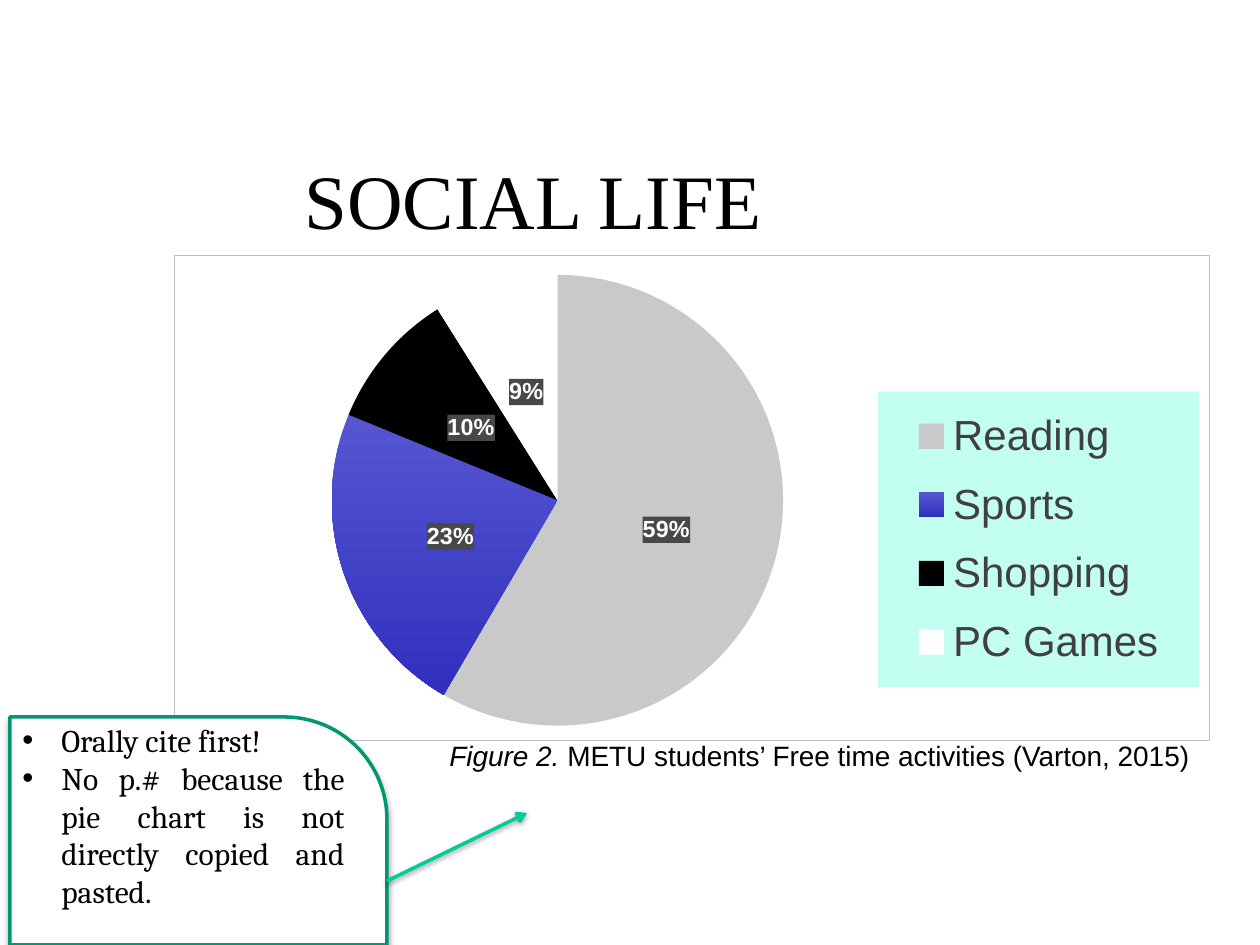
from lxml import etree
from pptx import Presentation, util as u
from pptx.chart.data import CategoryChartData
from pptx.dml.color import RGBColor
from pptx.enum import chart as charts, shapes, text
from pptx.oxml import parse_xml
from pptx.oxml.ns import nsdecls, qn

EMU_PER_PX = 914400 / 126
rgb = RGBColor.from_string


def px(*lengths):
    return [u.Emu(round(n * EMU_PER_PX)) for n in lengths]


def add_shadow(shape, blur, distance, opacity):
    shape._element.spPr.append(parse_xml(
        f'<a:effectLst {nsdecls("a")}><a:outerShdw blurRad="{u.Pt(blur)}" '
        f'dist="{u.Pt(distance)}" dir="5400000" rotWithShape="0">'
        f'<a:srgbClr val="000000"><a:alpha val="{opacity * 1000}"/></a:srgbClr>'
        '</a:outerShdw></a:effectLst>'))


prs = Presentation()
prs.slide_width, prs.slide_height = px(1260, 945)
slide = prs.slides.add_slide(prs.slide_layouts[5])

# Title
title = slide.shapes.title
title.left, title.top, title.width, title.height = px(292, 108, 1036, 182)
title.text_frame.text = "SOCIAL LIFE"
title.text_frame.vertical_anchor = text.MSO_ANCHOR.MIDDLE
heading = title.text_frame.paragraphs[0]
heading.alignment = text.PP_ALIGN.LEFT
heading.font.size = u.Pt(44)
heading.font.name = "Times New Roman"
heading.font.color.rgb = rgb("000000")

# Pie chart of activities
activities = CategoryChartData()
activities.categories = ["Reading", "Sports", "Shopping", "PC Games"]
activities.add_series("Series 1", [59, 23, 10, 9])
pie = slide.shapes.add_chart(
    charts.XL_CHART_TYPE.PIE, *px(174, 255, 1036, 486), activities).chart
pie.has_title = False
pie.font.size = u.Pt(10)
pie.font.name = "Arial"
pie.font.color.rgb = rgb("000000")
pie.plots[0].vary_by_categories = True
slices = pie.plots[0].series[0]

for i, color in enumerate(["C9C9C9", None, "000000", "FFFFFF"]):
    part = slices.points[i].format
    part.line.fill.background()
    if color:
        part.fill.solid()
        part.fill.fore_color.rgb = rgb(color)
    else:
        part.fill.gradient()
        part.fill.gradient_angle = 270
        for stop, shade in zip(part.fill.gradient_stops, ["5656D1", "3030BE"]):
            stop.color.rgb = rgb(shade)

shares = slices.data_labels
shares.show_value = True
shares.number_format = '0"%"'
shares.number_format_is_linked = False
shares.position = charts.XL_LABEL_POSITION.CENTER
shares.font.size = u.Pt(13.3)
shares.font.bold = True
shares.font.name = "Arial"
shares.font.color.rgb = rgb("FFFFFF")

pie.has_legend = True
legend = pie.legend
legend.position = charts.XL_LEGEND_POSITION.RIGHT
legend.include_in_layout = False
legend.font.size = u.Pt(24)
legend.font.name = "Arial"
legend.font.color.rgb = rgb("404040")

# Chart backgrounds and border
solid = '<a:solidFill><a:srgbClr val="{}"/></a:solidFill>'
for owner, look in [
    (pie._chartSpace, '<a:noFill/><a:ln w="9525">' + solid.format("BFBFBF") + '</a:ln>'),
    (legend._element, solid.format("C2FFF0")),
    (shares._element, solid.format("484848")),
]:
    owner.find(qn("c:txPr")).addprevious(
        parse_xml(f'<c:spPr {nsdecls("c", "a")}>{look}</c:spPr>'))

# Places of pie and legend, as fractions of the chart
plot_area = pie._chartSpace.find(".//" + qn("c:plotArea"))
for owner, index, target, place in [
    (plot_area, 0, '<c:layoutTarget val="inner"/>', (0.15, 0.04, 0.44, 0.93)),
    (legend._element, 1, "", (0.68, 0.28, 0.31, 0.61)),
]:
    for old in owner.findall(qn("c:layout")):
        owner.remove(old)
    sizes = "".join(f'<c:{key} val="{n}"/>' for key, n in zip("xywh", place))
    owner.insert(index, parse_xml(
        f'<c:layout {nsdecls("c")}><c:manualLayout>{target}<c:xMode val="edge"/>'
        f'<c:yMode val="edge"/>{sizes}</c:manualLayout></c:layout>'))

# Figure caption
caption = slide.shapes.add_textbox(*px(437, 732, 798, 47)).text_frame
caption.word_wrap = True
caption_line = caption.paragraphs[0]
caption_line.font.size = u.Pt(16)
caption_line.font.name = "Arial"
caption_line.font.color.rgb = rgb("000000")
figure = caption_line.add_run()
figure.text = "Figure 2. "
figure.font.italic = True
caption_line.add_run().text = "METU students’ Free time activities (Varton, 2015)"

# Citation advice
advice = slide.shapes.add_shape(
    shapes.MSO_SHAPE.ROUND_1_RECTANGLE, *px(10, 717, 377, 228))
advice.adjustments[0] = 0.45
advice.fill.solid()
advice.fill.fore_color.rgb = rgb("FFFFFF")
advice.line.color.rgb = rgb("009771")
advice.line.width = u.Pt(2)
add_shadow(advice, 4, 3, 40)
frame = advice.text_frame
frame.word_wrap = True
frame.vertical_anchor = text.MSO_ANCHOR.TOP
frame.margin_top, = px(4)
frame.text = ("Orally cite first!\n"
              "No p.# because the pie chart is not directly copied and pasted.")
for tip in frame.paragraphs:
    tip.alignment = text.PP_ALIGN.JUSTIFY
    tip.font.size = u.Pt(18)
    tip.font.name = "Cambria"
    tip.font.color.rgb = rgb("000000")
    indent, = px(39)
    properties = tip._p.get_or_add_pPr()
    properties.set("marL", str(indent))
    properties.set("indent", str(-indent))
    bullet = [parse_xml(f'<a:buFont {nsdecls("a")} typeface="Arial"/>'),
              parse_xml(f'<a:buChar {nsdecls("a")} char="•"/>')]
    for n, element in enumerate(bullet):
        properties.insert(n, element)

# Arrow from the advice to the caption
pointer = slide.shapes.add_connector(
    shapes.MSO_CONNECTOR.STRAIGHT, *px(387, 881, 527, 813))
pointer.line.color.rgb = rgb("00CC99")
pointer.line.width = u.Pt(2)
etree.SubElement(pointer.line._get_or_add_ln(), qn("a:tailEnd"), type="arrow")
add_shadow(pointer, 3.1, 1.6, 38)

prs.save("out.pptx")
